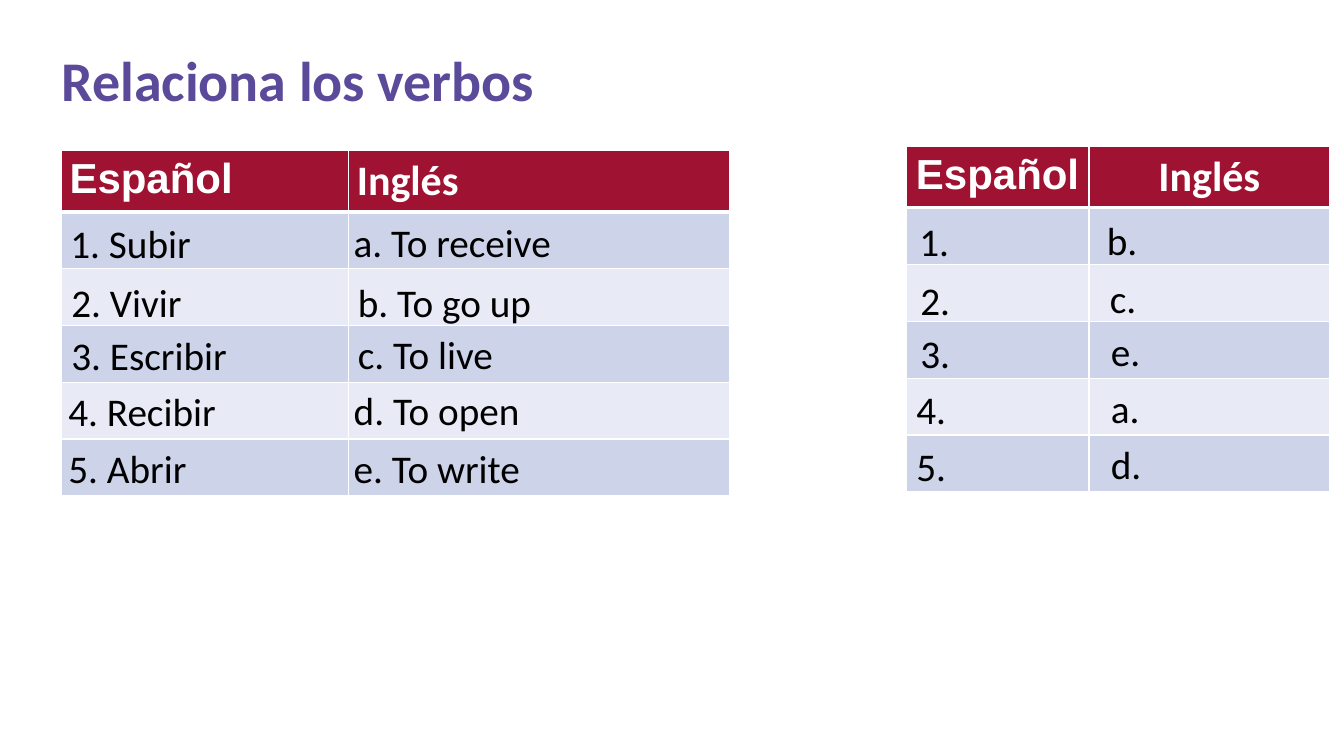
from dataclasses import dataclass

from lxml.etree import SubElement
from pptx import Presentation
from pptx.dml.color import RGBColor
from pptx.enum.text import MSO_ANCHOR, MSO_AUTO_SIZE, PP_ALIGN
from pptx.oxml.ns import qn
from pptx.util import Inches, Pt

# Content: each entry is (text, left, top, width) in inches
TITLE = "Relaciona los verbos"
HEADERS = ["Español", "Inglés"]
EXERCISE = {
    "at": (0.61, 1.49), "columns": [2.85, 3.78], "align": PP_ALIGN.LEFT,
    "entries": [
        ("1. Subir", 0.6, 2.13, 2.12), ("a. To receive", 3.41, 2.12, 3.31),
        ("2. Vivir", 0.61, 2.71, 2.65), ("b. To go up", 3.45, 2.71, 2.65),
        ("3. Escribir", 0.61, 3.24, 2.88), ("c. To live", 3.45, 3.23, 2.65),
        ("4. Recibir", 0.58, 3.79, 2.72), ("d. To open", 3.41, 3.78, 2.72),
        ("5. Abrir", 0.58, 4.36, 2.65), ("e. To write", 3.41, 4.36, 3.09),
    ],
}
ANSWERS = {
    "at": (8.99, 1.45), "columns": [1.81, 2.39], "align": PP_ALIGN.CENTER,
    "entries": [
        ("1.", 9.02, 2.11, 2.12), ("b.", 10.88, 2.1, 2.12),
        ("2.", 9.03, 2.69, 2.65), ("c.", 10.91, 2.67, 2.12),
        ("3.", 9.03, 3.22, 2.88), ("e.", 10.92, 3.2, 2.12),
        ("4.", 8.99, 3.77, 2.72), ("a.", 10.92, 3.76, 2.12),
        ("5.", 8.99, 4.34, 2.65), ("d.", 10.92, 4.32, 2.12),
    ],
}


@dataclass(frozen=True)
class Theme:
    title: str = "5B499A"
    header: str = "9F1231"
    bands: tuple = ("CDD4EA", "E8EBF5")
    white: str = "FFFFFF"
    text: str = "000000"
    font: str = "Calibri"
    header_fonts: tuple = ("Arial", "Calibri")
    title_size: int = 40
    header_size: int = 30
    entry_size: int = 28


THEME = Theme()
VERB_ROWS = 5
TABLE_HEIGHT, HEADER_HEIGHT, ENTRY_HEIGHT = 3.43, 0.61, 0.57


def write(frame, text, size, color, font=THEME.font, bold=False, align=PP_ALIGN.LEFT):
    paragraph = frame.paragraphs[0]
    paragraph.alignment = align
    run = paragraph.add_run()
    run.text = text
    run.font.name = font
    run.font.size = Pt(size)
    run.font.bold = bold
    run.font.color.rgb = RGBColor.from_string(color)


def style_cell(cell, fill, bottom_width):
    cell.margin_left = cell.margin_right = Inches(0.08)
    cell.margin_top = cell.margin_bottom = Inches(0.05)
    # Borders come before the fill in the cell properties
    properties = cell._tc.get_or_add_tcPr()
    for side, width in (("L", 1), ("R", 1), ("T", 1), ("B", bottom_width)):
        border = SubElement(properties, qn(f"a:ln{side}"), w=str(Pt(width)))
        solid = SubElement(border, qn("a:solidFill"))
        SubElement(solid, qn("a:srgbClr"), val=THEME.white)
    cell.fill.solid()
    cell.fill.fore_color.rgb = RGBColor.from_string(fill)


def add_verb_table(slide, content):
    # Grid with a header row and banded rows
    left, top = content["at"]
    columns = content["columns"]
    table = slide.shapes.add_table(
        VERB_ROWS + 1, len(columns), Inches(left), Inches(top),
        Inches(sum(columns)), Inches(TABLE_HEIGHT)).table
    for column, width in zip(table.columns, columns):
        column.width = Inches(width)
    for index, row in enumerate(table.rows):
        is_header = index == 0
        row.height = Inches(HEADER_HEIGHT if is_header
                            else (TABLE_HEIGHT - HEADER_HEIGHT) / VERB_ROWS)
        fill = THEME.header if is_header else THEME.bands[(index - 1) % 2]
        for cell in row.cells:
            # The line under the header is thicker; both neighbours share it
            style_cell(cell, fill, 3 if is_header else 1)
    for cell, header, font in zip(table.rows[0].cells, HEADERS, THEME.header_fonts):
        write(cell.text_frame, header, THEME.header_size, THEME.white,
              font=font, bold=True, align=content["align"])

    # Movable entries laid over the grid
    for text, x, y, width in content["entries"]:
        entry = slide.shapes.add_textbox(
            Inches(x), Inches(y), Inches(width), Inches(ENTRY_HEIGHT)).text_frame
        entry.word_wrap = True
        entry.auto_size = MSO_AUTO_SIZE.SHAPE_TO_FIT_TEXT
        write(entry, text, THEME.entry_size, THEME.text)


def main():
    presentation = Presentation()
    presentation.slide_width = Inches(13.33)
    presentation.slide_height = Inches(7.5)
    slide = presentation.slides.add_slide(presentation.slide_layouts[5])

    # Title
    title = slide.shapes.title
    title.left, title.top = Inches(0.51), Inches(0.4)
    title.width, title.height = Inches(11.5), Inches(0.68)
    title.text_frame.vertical_anchor = MSO_ANCHOR.TOP
    title.text_frame.auto_size = MSO_AUTO_SIZE.NONE
    write(title.text_frame, TITLE, THEME.title_size, THEME.title, bold=True)

    # Exercise and answer tables
    for content in (EXERCISE, ANSWERS):
        add_verb_table(slide, content)

    presentation.save("out.pptx")


if __name__ == "__main__":
    main()
